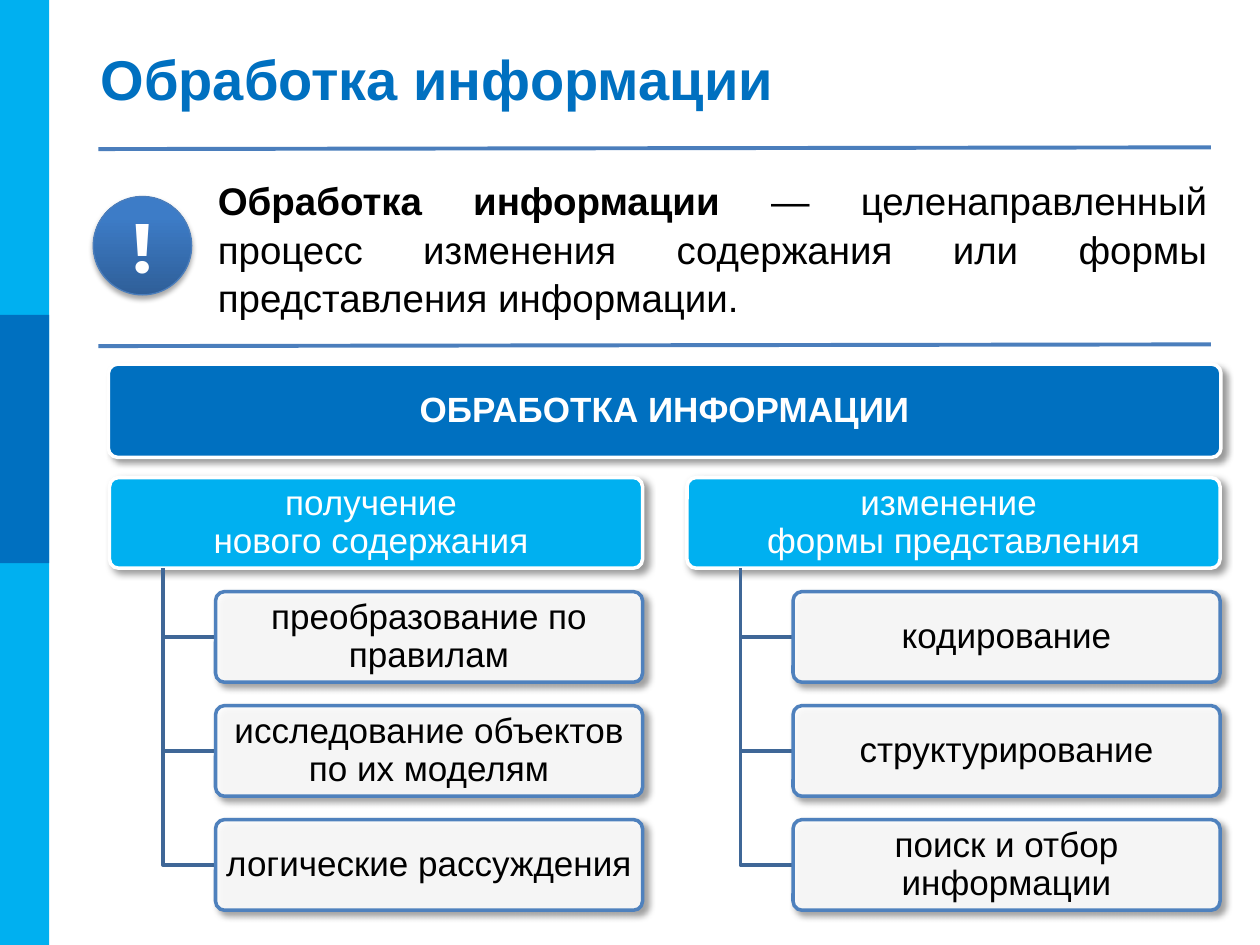
from dataclasses import dataclass

import pptx
import pptx.dml.color
import pptx.enum.shapes
import pptx.enum.text
import pptx.oxml
import pptx.util
from pptx.oxml.ns import nsdecls, qn

Pt = pptx.util.Pt
SHAPE = pptx.enum.shapes.MSO_SHAPE
ALIGN = pptx.enum.text.PP_ALIGN
ANCHOR = pptx.enum.text.MSO_ANCHOR

SKY, BLUE, RULE, WHITE, BLACK = "00B0F0", "0070C0", "4B7EBC", "FFFFFF", "000000"
BOX_W, BOX_H, INDENT, TRUNK = 304.6, 51.8, 60.6, 30.4
TREE_TOP, ROW_STEP = 272.9, 65.15


@dataclass
class Branch:
    left: float
    title: str
    items: list[str]


BRANCHES = [
    Branch(62.6, "получение \nнового содержания ",
           ["преобразование по правилам", "исследование объектов по их моделям",
            "логические рассуждения"]),
    Branch(392.6, "изменение \nформы представления",
           ["кодирование", "структурирование", "поиск и отбор информации"]),
]


def rgb(value: str):
    return pptx.dml.color.RGBColor.from_string(value)


def add_text(tf, text, *, size=20, color=WHITE, bold=False, font="Arial",
             align=ALIGN.CENTER, anchor=ANCHOR.MIDDLE, spacing=None, insets=None):
    """Append text to the first paragraph; a newline becomes a line break."""
    tf.word_wrap = True
    tf.vertical_anchor = anchor
    if insets:
        tf.margin_left = tf.margin_right = Pt(insets[0])
        tf.margin_top = tf.margin_bottom = Pt(insets[1])
    p = tf.paragraphs[0]
    p.alignment = align
    p.line_spacing = spacing
    for i, line in enumerate(text.split("\n")):
        if i:
            p.add_line_break()
        r = p.add_run()
        r.text = line
        r.font.size, r.font.bold, r.font.name = Pt(size), bold, font
        r.font.color.rgb = rgb(color)


def add_shadow(sp, alpha: int, blur: float, dist: float, angle: int):
    sp._element.spPr.append(pptx.oxml.parse_xml(
        f'<a:effectLst {nsdecls("a")}><a:outerShdw blurRad="{Pt(blur)}" '
        f'dist="{Pt(dist)}" dir="{angle * 60000}" rotWithShape="0">'
        f'<a:srgbClr val="000000"><a:alpha val="{alpha * 1000}"/></a:srgbClr>'
        '</a:outerShdw></a:effectLst>'))


def add_shape(s, kind, x, y, w, h, fill=None, line=None, width=2.0):
    sp = s.shapes.add_shape(kind, Pt(x), Pt(y), Pt(w), Pt(h))
    if fill:
        sp.fill.solid()
        sp.fill.fore_color.rgb = rgb(fill)
    if line:
        sp.line.color.rgb = rgb(line)
        sp.line.width = Pt(width)
    else:
        sp.line.fill.background()
    return sp


def add_box(s, x, y, w, h, text, fill, line, color=WHITE, bold=False, alpha=None):
    sp = add_shape(s, SHAPE.ROUNDED_RECTANGLE, x, y, w, h, fill, line)
    sp.adjustments[0] = 0.1
    if alpha:
        clr = sp._element.spPr.find(qn("a:solidFill"))[0]
        clr.append(pptx.oxml.parse_xml(
            f'<a:alpha {nsdecls("a")} val="{alpha * 1000}"/>'))
    add_shadow(sp, 40, 4, 3, 45)
    add_text(sp.text_frame, text, color=color, bold=bold, spacing=0.9, insets=(3, 2))


def add_textbox(s, x, y, w, h):
    return s.shapes.add_textbox(Pt(x), Pt(y), Pt(w), Pt(h)).text_frame


def add_rule(s, y: float):
    c = s.shapes.add_connector(pptx.enum.shapes.MSO_CONNECTOR.STRAIGHT,
                               Pt(56.2), Pt(y), Pt(691.9), Pt(y - 1))
    c.line.color.rgb = rgb(RULE)
    c.line.width = Pt(2.25)
    c._element.spPr.append(pptx.oxml.parse_xml(f'<a:effectLst {nsdecls("a")}/>'))


def add_elbow(s, x1, y1, x2, y2):
    fb = s.shapes.build_freeform(Pt(x1), Pt(y1))
    fb.add_line_segments([(Pt(x1), Pt(y2)), (Pt(x2), Pt(y2))], close=False)
    sp = fb.convert_to_shape()
    sp.shadow.inherit = False
    sp.fill.background()
    sp.line.color.rgb = rgb("3F6797")
    sp.line.width = Pt(2)


def add_badge(s):
    sp = add_shape(s, SHAPE.OVAL, 53.3, 112.3, 56.2, 56.2, line=RULE, width=0.75)
    sp.fill.gradient()
    sp.fill.gradient_angle = 90
    stops = [(0, "2F5F99"), (0.8, "3D7CC7")]
    for stop, (pos, color) in zip(sp.fill.gradient_stops, stops):
        stop.position = pos
        stop.color.rgb = rgb(color)
    add_shadow(sp, 35, 3.1, 1.8, 90)
    add_text(sp.text_frame, "!", size=40, bold=True, font="Montserrat")


def add_branch(s, b: Branch):
    add_box(s, b.left, TREE_TOP, BOX_W, BOX_H, b.title, SKY, WHITE)
    x = b.left + INDENT
    for i, item in enumerate(b.items, 1):
        y = TREE_TOP + i * ROW_STEP
        add_elbow(s, b.left + TRUNK, TREE_TOP + BOX_H, x, y + BOX_H / 2)
        add_box(s, x, y, BOX_W - INDENT, BOX_H, item, WHITE, "4F81BD", BLACK, alpha=90)


def main():
    prs = pptx.Presentation()
    prs.slide_width, prs.slide_height = Pt(720), Pt(540)
    s = prs.slides.add_slide(prs.slide_layouts[6])

    for y, h, color in [(0, 540, SKY), (180, 141.8, BLUE)]:
        add_shape(s, SHAPE.RECTANGLE, 0, y, 28.1, h, color).shadow.inherit = False

    add_text(add_textbox(s, 50.4, 21.6, 649.4, 46.1), "Обработка информации",
             size=32, color=BLUE, bold=True, align=ALIGN.LEFT)
    tf = add_textbox(s, 117.4, 95.8, 579.6, 101.5)
    for text, bold in [
            ("Обработка информации ", True),
            ("— целенаправленный процесс изменения содержания или формы "
             "представления информации.", False)]:
        add_text(tf, text, size=22, color=BLACK, bold=bold, align=ALIGN.JUSTIFY,
                 anchor=ANCHOR.TOP, spacing=1.06)
    add_badge(s)
    for y in (85.2, 197.8):
        add_rule(s, y)

    for b in BRANCHES:
        add_branch(s, b)
    add_box(s, 61.9, 208.1, 635.8, 53.3, "ОБРАБОТКА ИНФОРМАЦИИ", BLUE, WHITE, bold=True)
    prs.save("out.pptx")


if __name__ == "__main__":
    main()
